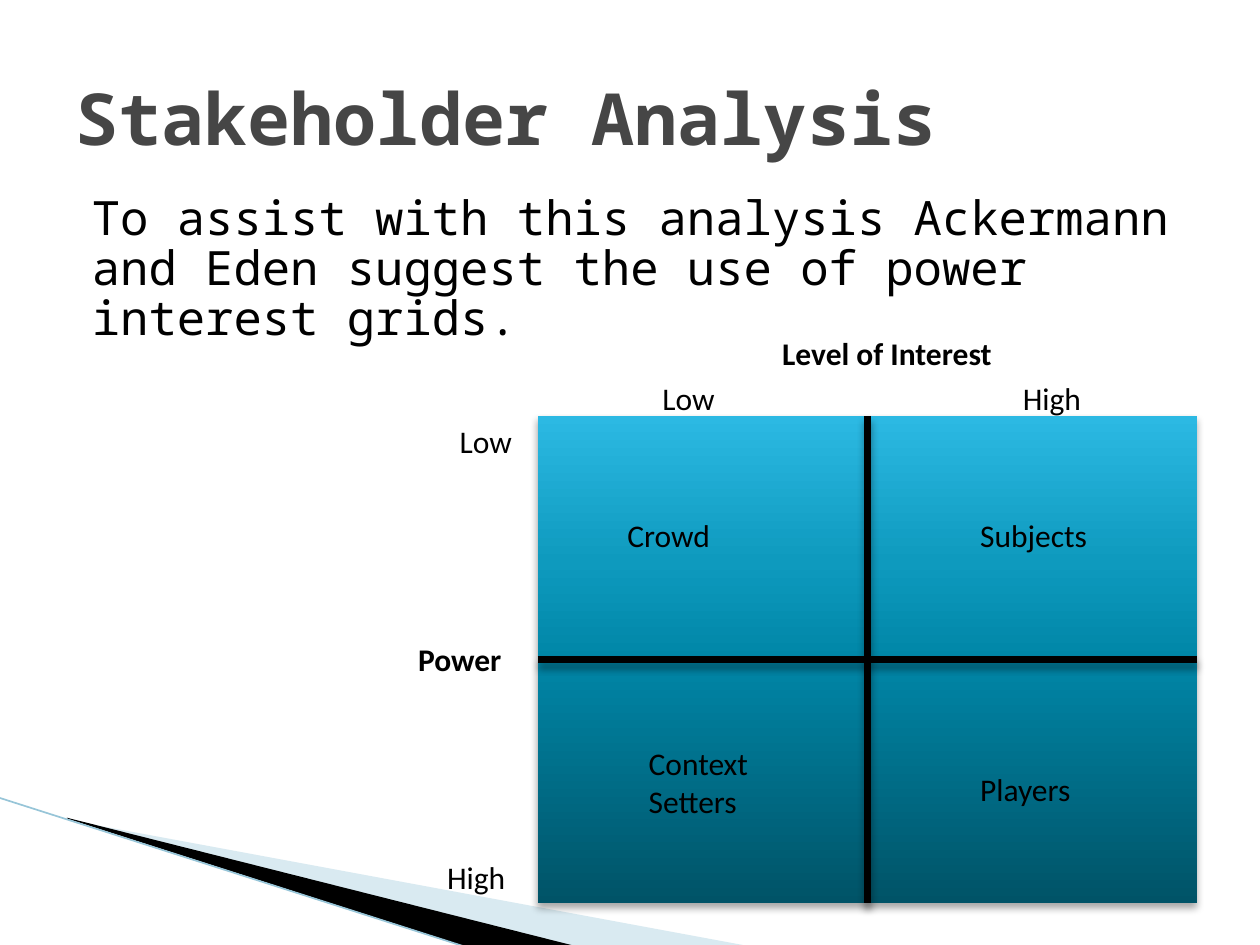
from lxml.etree import SubElement
from pptx import Presentation
from pptx.dml.color import RGBColor
from pptx.enum.shapes import MSO_CONNECTOR as Connector, MSO_SHAPE as Shape
from pptx.enum.text import MSO_ANCHOR as Anchor, MSO_AUTO_SIZE as AutoSize
from pptx.oxml.ns import qn
from pptx.util import Pt

THEME = {
    "heading_font": "Noto Sans Mono", "label_font": "Calibri",
    "heading": "464646", "ink": "000000", "pale": "A0CBDC", "edge": "97C5D8",
    "gradient": [(0, "005367"), (50, "0086A7"), (70, "0E9ABE"), (100, "2CB9E3")],
    "title_size": 41, "body_size": 27, "label_size": 18,
}

TITLE = "Stakeholder Analysis"
INTRO = ("To assist with this analysis Ackermann and Eden suggest "
         "the use of power interest grids.")

AXIS_TITLES = [
    ("Level of Interest", 439.9, 187.2, 162.7),
    ("Power", 231.8, 362.2, 65.5),
]
LEVELS = [
    ("Low", 371.5, 213.1, 98.6),
    ("High", 577.4, 213.1, 52.6),
    ("Low", 255.6, 237.6, 52.6),
    ("High", 248.4, 486.7, 59),
]
QUADRANTS = [
    ("Crowd", 351.4, 291.6, 99.4),
    ("Subjects", 553, 291.6, 99.4),
    ("Context Setters", 363.6, 421.9, 99.4),
    ("Players", 553, 436.3, 99.4),
]

PALE_WEDGE = [(39.6, 468.7), (428.4, 540.7), (328.3, 540.7), (39.6, 468)]
DARK_WEDGE = [(38.2, 467.3), (329, 540.7), (267.8, 541.4), (38.9, 468)]
EDGE = (-0.7, 455.8, 267.1, 541.4)

GRID_LEFT, GRID_TOP, GRID_WIDTH, GRID_HEIGHT = 307.4, 237.6, 376.6, 278.6
DIVIDER_WIDTH = 4.33

presentation = Presentation()
presentation.slide_width, presentation.slide_height = Pt(720), Pt(540)
slide = presentation.slides.add_slide(presentation.slide_layouts[6])
shapes = slide.shapes


def color(key):
    return RGBColor.from_string(THEME[key])


def add_color(parent, value, alpha=None):
    node = SubElement(parent, qn("a:srgbClr"), val=value)
    if alpha is not None:
        SubElement(node, qn("a:alpha"), val=str(alpha * 1000))


def add_shadow(effects):
    shadow = SubElement(effects, qn("a:outerShdw"), blurRad=str(Pt(4)),
                        dist=str(Pt(3)), dir="5400000", rotWithShape="0")
    add_color(shadow, THEME["ink"], 35)


def add_wedge(points, key, alpha=100):
    builder = shapes.build_freeform(*map(Pt, points[0]), scale=1.0)
    builder.add_line_segments([tuple(map(Pt, point)) for point in points[1:]])
    wedge = builder.convert_to_shape()
    wedge.shadow.inherit = False
    wedge.line.fill.background()
    wedge.fill.solid()
    wedge.fill.fore_color.rgb = color(key)
    fill_color = wedge._element.spPr.find(qn("a:solidFill"))[0]
    SubElement(fill_color, qn("a:alpha"), val=str(alpha * 1000))


def add_line(ends, key, width):
    line = shapes.add_connector(Connector.STRAIGHT, *map(Pt, ends))
    line.line.color.rgb = color(key)
    line.line.width = Pt(width)
    return SubElement(line._element.spPr, qn("a:effectLst"))


def add_text(text, box, font, size, key="ink", bold=False):
    frame = shapes.add_textbox(*map(Pt, box)).text_frame
    frame.word_wrap = True
    frame.text = text
    style = frame.paragraphs[0].runs[0].font
    style.name, style.size, style.bold = THEME[font], Pt(THEME[size]), bold
    style.color.rgb = color(key)
    return frame


def add_labels(labels, bold=False):
    for text, left, top, width in labels:
        height = 50.4 if text == "Context Setters" else 28.8
        frame = add_text(text, (left, top, width, height),
                         "label_font", "label_size", bold=bold)
        frame.auto_size = AutoSize.SHAPE_TO_FIT_TEXT


add_wedge(PALE_WEDGE, "pale", 40)
add_wedge(DARK_WEDGE, "ink")
add_line(EDGE, "edge", 0.95)

title = add_text(TITLE, (36, 21.6, 648, 90), "heading_font", "title_size", "heading", True)
title.vertical_anchor = Anchor.MIDDLE
intro = add_text(INTRO, (45.4, 108.4, 648, 85.7), "heading_font", "body_size")
intro.paragraphs[0].line_spacing = 0.88

grid = shapes.add_shape(Shape.RECTANGLE, *map(Pt, (GRID_LEFT, GRID_TOP, GRID_WIDTH, GRID_HEIGHT)))
grid.line.fill.background()
grid.fill.gradient()
grid.fill.gradient_angle = 90
stops = grid._element.spPr.find(".//" + qn("a:gsLst"))
stops.clear()
for position, value in THEME["gradient"]:
    add_color(SubElement(stops, qn("a:gs"), pos=str(position * 1000)), value)
grid.shadow.inherit = False
add_shadow(grid._element.spPr.find(qn("a:effectLst")))

middle_x, middle_y = GRID_LEFT + GRID_WIDTH / 2, GRID_TOP + GRID_HEIGHT / 2
for divider in [
    (middle_x, GRID_TOP, middle_x, GRID_TOP + GRID_HEIGHT),
    (GRID_LEFT, middle_y, GRID_LEFT + GRID_WIDTH, middle_y),
]:
    add_shadow(add_line(divider, "ink", DIVIDER_WIDTH))

add_labels(LEVELS)
add_labels(AXIS_TITLES, bold=True)
add_labels(QUADRANTS)

presentation.save("out.pptx")
